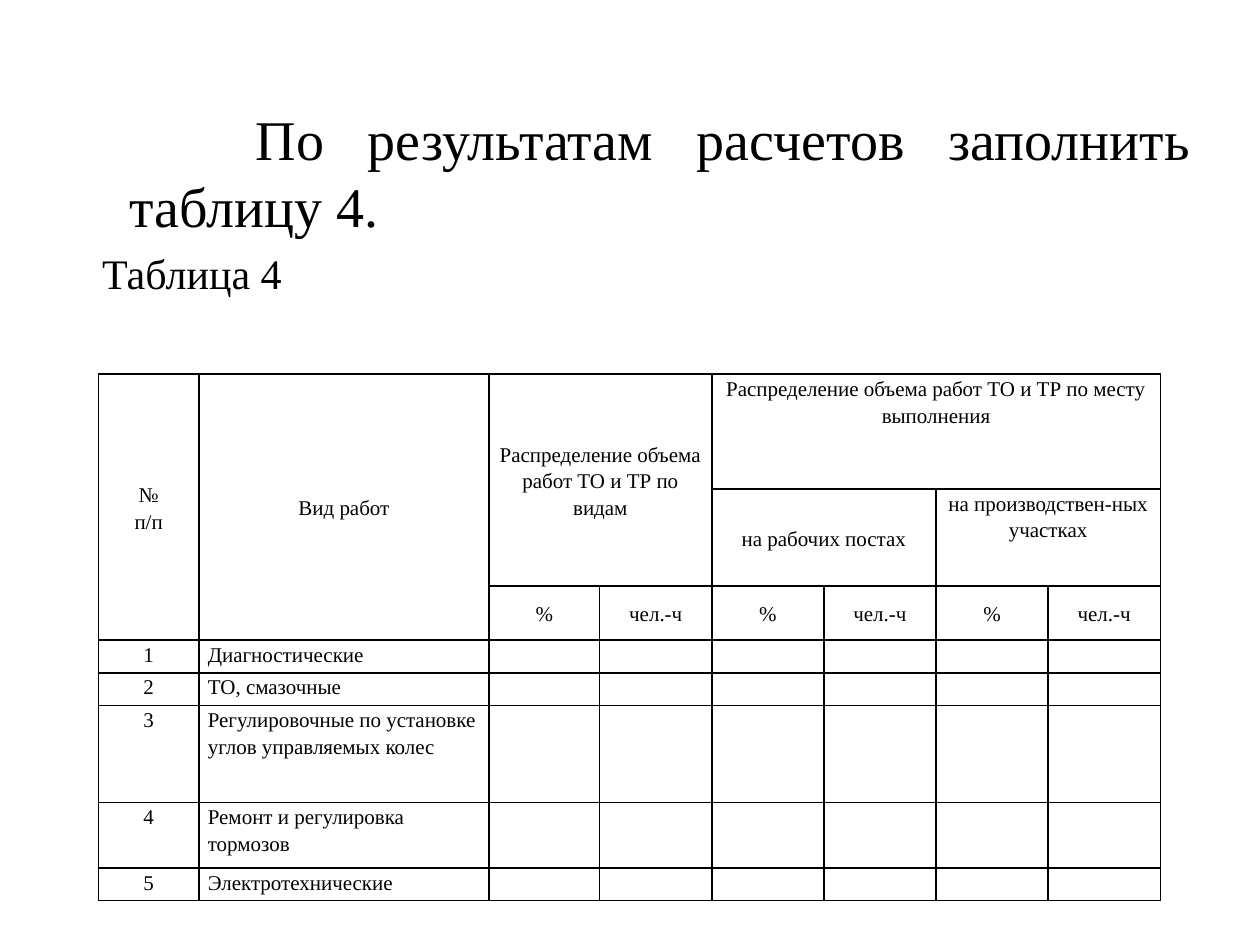
from pptx import Presentation, util as u
from pptx.dml.color import RGBColor
from pptx.enum import text as t
from pptx.oxml import parse_xml
from pptx.oxml.ns import nsdecls

BLACK = "000000"
FONT = "Times New Roman"
COLUMN_WIDTHS = [0.8, 2.3, 0.88] + [0.89] * 5
ROW_HEIGHTS = [0.91, 0.77, 0.43, 0.26, 0.26, 0.77, 0.52, 0.26]
HEADERS = [
    (0, 0, 3, 1, "№\nп/п", True),
    (0, 1, 3, 1, "Вид работ", True),
    (0, 2, 2, 2, "Распределение объема работ ТО и ТР по видам", True),
    (0, 4, 1, 4, "Распределение объема работ ТО и ТР по месту выполнения", False),
    (1, 4, 1, 2, "на рабочих постах", True),
    (1, 6, 1, 2, "на производствен-ных участках", False),
]
UNITS = ["%", "чел.-ч"]
WORKS = [
    "Диагностические",
    "ТО, смазочные",
    "Регулировочные по установке углов управляемых колес",
    "Ремонт и регулировка тормозов",
    "Электротехнические",
]


def color(value):
    return RGBColor.from_string(value)


def write(paragraph, content, size=12, align=t.PP_ALIGN.LEFT, line_spacing=None):
    paragraph.alignment = align
    if line_spacing:
        paragraph.line_spacing = line_spacing
    run = paragraph.add_run()
    run.text = content
    run.font.size = u.Pt(size)
    run.font.name = FONT
    run.font.color.rgb = color(BLACK)


def set_indent(paragraph, left, first_line):
    properties = paragraph._p.get_or_add_pPr()
    properties.set("marL", str(u.Inches(left)))
    properties.set("indent", str(u.Inches(first_line)))
    properties.append(parse_xml(f"<a:buNone {nsdecls('a')}/>"))


def add_body(slide, left, top, width, height):
    body = slide.placeholders[1]
    body.left, body.top = u.Inches(left), u.Inches(top)
    body.width, body.height = u.Inches(width), u.Inches(height)
    frame = body.text_frame
    frame.auto_size = t.MSO_AUTO_SIZE.NONE
    instruction = frame.paragraphs[0]
    write(instruction, "По результатам расчетов заполнить таблицу 4.",
          size=32, align=t.PP_ALIGN.JUSTIFY)
    set_indent(instruction, 0.38, 1)
    caption = frame.add_paragraph()
    write(caption, "Таблица 4", size=24)
    set_indent(caption, 0.16, 0)


def style_cell(cell):
    cell.margin_left = cell.margin_right = u.Inches(0.07)
    cell.margin_top = cell.margin_bottom = 0
    properties = cell._tc.get_or_add_tcPr()
    for side in ("lnL", "lnR", "lnT", "lnB"):
        properties.append(parse_xml(
            f'<a:{side} {nsdecls("a")} w="{u.Pt(1)}"><a:solidFill>'
            f'<a:srgbClr val="{BLACK}"/></a:solidFill></a:{side}>'))
    cell.fill.background()
    cell.text_frame.paragraphs[0]._p.append(
        parse_xml(f'<a:endParaRPr {nsdecls("a")} sz="1200"/>'))


def fill_cell(cell, content, align=t.PP_ALIGN.CENTER, middle=False):
    if middle:
        cell.vertical_anchor = t.MSO_ANCHOR.MIDDLE
    frame = cell.text_frame
    for index, line in enumerate(content.split("\n")):
        paragraph = frame.add_paragraph() if index else frame.paragraphs[0]
        write(paragraph, line, align=align, line_spacing=1.15)


def add_works_table(slide, left, top):
    table = slide.shapes.add_table(
        len(ROW_HEIGHTS), len(COLUMN_WIDTHS), u.Inches(left), u.Inches(top),
        u.Inches(sum(COLUMN_WIDTHS)), u.Inches(sum(ROW_HEIGHTS))).table
    table.first_row = table.horz_banding = False
    for column, width in zip(table.columns, COLUMN_WIDTHS):
        column.width = u.Inches(width)
    for row, height in zip(table.rows, ROW_HEIGHTS):
        row.height = u.Inches(height)
        for cell in row.cells:
            style_cell(cell)
    for row, column, row_span, column_span, content, middle in HEADERS:
        cell = table.cell(row, column)
        cell.merge(table.cell(row + row_span - 1, column + column_span - 1))
        fill_cell(cell, content, middle=middle)
    for column in range(2, len(COLUMN_WIDTHS)):
        fill_cell(table.cell(2, column), UNITS[column % 2], middle=True)
    for number, work in enumerate(WORKS, 1):
        fill_cell(table.cell(number + 2, 0), str(number))
        fill_cell(table.cell(number + 2, 1), work, align=t.PP_ALIGN.LEFT)


def main():
    presentation = Presentation()
    presentation.slide_width = u.Inches(10)
    presentation.slide_height = u.Inches(7.5)
    slide = presentation.slides.add_slide(presentation.slide_layouts[1])
    title = slide.shapes.title.element
    title.getparent().remove(title)
    add_body(slide, 0.55, 0.78, 9, 4.95)
    add_works_table(slide, 0.78, 2.97)
    presentation.save("out.pptx")


if __name__ == "__main__":
    main()
